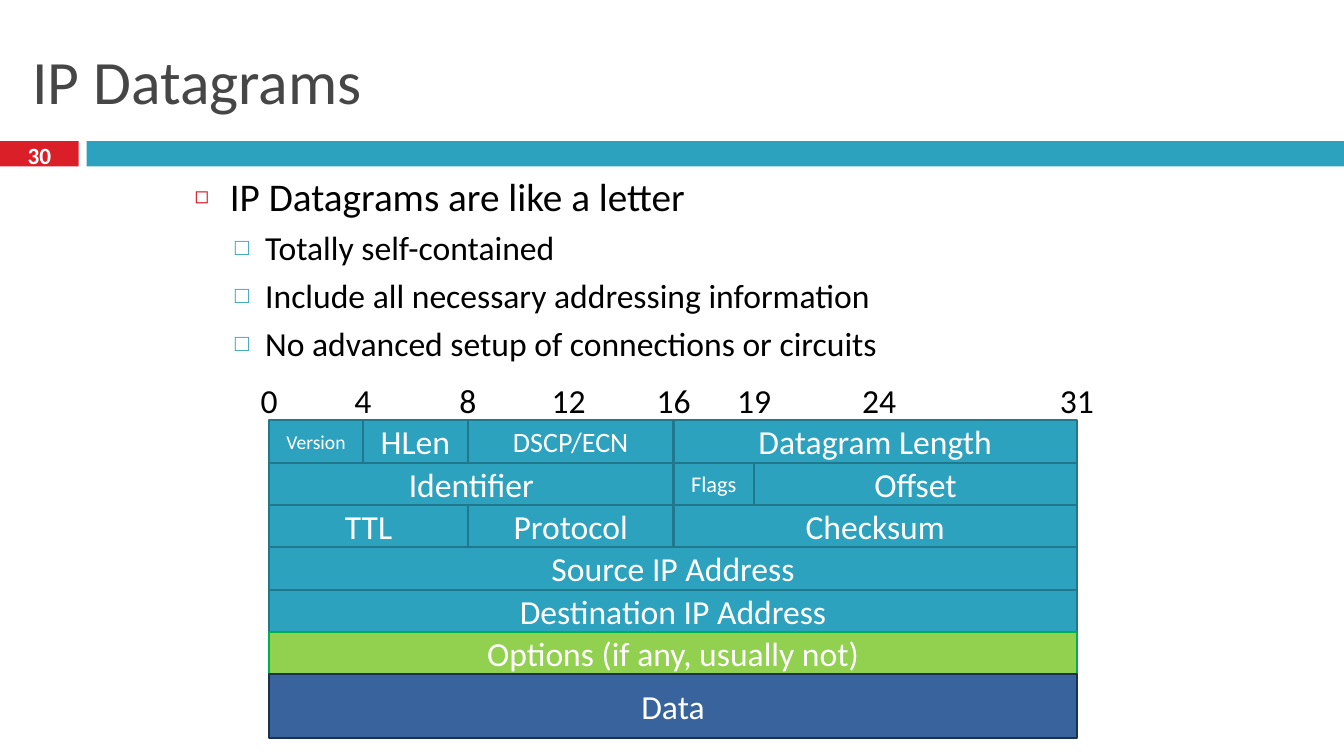
from lxml.etree import SubElement
from pptx import Presentation
from pptx.dml.color import RGBColor
from pptx.enum.shapes import MSO_SHAPE
from pptx.enum.text import MSO_ANCHOR, PP_ALIGN
from pptx.oxml.ns import qn
from pptx.util import Inches, Pt

COLORS = {
    "white": "FFFFFF", "black": "000000", "heading": "464646",
    "red": "DA1F28", "teal": "2DA2BF", "teal_edge": "21788D",
    "green": "92D050", "green_edge": "00B050",
    "navy": "39639D", "navy_edge": "1C314E",
}

# Horizontal place of each bit boundary; the row ends after bit 31.
BIT_X = {0: 2.67, 4: 3.6, 8: 4.64, 12: 5.64, 16: 6.68, 19: 7.48, 24: 8.72, 31: 10.68}

# Each row: fields of (label, first bit, last boundary, font size).
HEADER_ROWS = [
    [("Version", 0, 4, 14), ("HLen", 4, 8, 24),
     ("DSCP/ECN", 8, 16, 20), ("Datagram Length", 16, 31, 24)],
    [("Identifier", 0, 16, 24), ("Flags", 16, 19, 16), ("Offset", 19, 31, 24)],
    [("TTL", 0, 8, 24), ("Protocol", 8, 16, 24), ("Checksum", 16, 31, 24)],
    [("Source IP Address", 0, 31, 24)],
    [("Destination IP Address", 0, 31, 24)],
    [("Options (if any, usually not)", 0, 31, 24)],
    [("Data", 0, 31, 24)],
]
ROW_COLORS = ["teal"] * 5 + ["green", "navy"]
ROW_HEIGHTS = [0.42] * 6 + [0.63]
HEADER_TOP = 4.17

BULLETS = [
    ("IP Datagrams are like a letter", 0),
    ("Totally self-contained", 1),
    ("Include all necessary addressing information", 1),
    ("No advanced setup of connections or circuits", 1),
]
BULLET_LEVELS = [
    {"size": 28, "before": 7, "margin": 0.35, "indent": -0.35,
     "char": "◻", "color": "red", "percent": 60},
    {"size": 24, "before": 5.5, "margin": 0.7, "indent": -0.3,
     "char": "□", "color": "teal", "percent": 70},
]


def rgb(name):
    return RGBColor.from_string(COLORS[name])


class DatagramSlide:
    font_name = "Calibri"

    def __init__(self, deck):
        self.slide = deck.slides.add_slide(deck.slide_layouts[1])
        self.shapes = self.slide.shapes

    def place(self, shape, *box):
        for side, length in zip(("left", "top", "width", "height"), box):
            setattr(shape, side, Inches(length))

    def add_words(self, paragraph, text, size, color, align=PP_ALIGN.CENTER, bold=False):
        paragraph.alignment = align
        run = paragraph.add_run()
        run.text = text
        style = {"name": self.font_name, "size": Pt(size), "bold": bold}
        for key, value in style.items():
            setattr(run.font, key, value)
        run.font.color.rgb = rgb(color)

    def title(self, text, box):
        heading = self.shapes.title
        self.place(heading, *box)
        heading.text_frame.vertical_anchor = MSO_ANCHOR.MIDDLE
        self.add_words(heading.text_frame.paragraphs[0], text, 44, "heading", PP_ALIGN.LEFT)

    def bullets(self, items, box):
        body = self.slide.placeholders[1]
        self.place(body, *box)
        frame = body.text_frame
        frame.vertical_anchor = MSO_ANCHOR.TOP
        for index, (text, level) in enumerate(items):
            paragraph = frame.add_paragraph() if index else frame.paragraphs[0]
            look = BULLET_LEVELS[level]
            paragraph.level = level
            paragraph.space_before = Pt(look["before"])
            self.add_words(paragraph, text, look["size"], "black", PP_ALIGN.LEFT)
            self.mark(paragraph, look)

    def mark(self, paragraph, look):
        """Give a paragraph its hanging indent and coloured bullet."""
        properties = paragraph._p.get_or_add_pPr()
        properties.set("marL", str(Inches(look["margin"])))
        properties.set("indent", str(Inches(look["indent"])))
        color = SubElement(properties, qn("a:buClr"))
        SubElement(color, qn("a:srgbClr"), val=COLORS[look["color"]])
        SubElement(properties, qn("a:buSzPct"), val=str(look["percent"] * 1000))
        SubElement(properties, qn("a:buChar"), char=look["char"])

    def rectangle(self, box, fill, edge=None):
        shape = self.shapes.add_shape(MSO_SHAPE.RECTANGLE, *map(Inches, box))
        shape.shadow.inherit = False
        shape.fill.solid()
        shape.fill.fore_color.rgb = rgb(fill)
        if edge:
            shape.line.color.rgb = rgb(edge)
            shape.line.width = Pt(1.5)
        else:
            shape.line.fill.background()
        return shape

    def field(self, text, box, size, fill):
        cell = self.rectangle(box, fill, fill + "_edge")
        cell.text_frame.word_wrap = True
        cell.text_frame.vertical_anchor = MSO_ANCHOR.MIDDLE
        self.add_words(cell.text_frame.paragraphs[0], text, size, "white")

    def label(self, text, box, size, color, bold=False):
        frame = self.shapes.add_textbox(*map(Inches, box)).text_frame
        frame.word_wrap = True
        frame.vertical_anchor = MSO_ANCHOR.MIDDLE
        self.add_words(frame.paragraphs[0], text, size, color, bold=bold)


def main():
    deck = Presentation()
    deck.slide_width, deck.slide_height = Inches(13.33), Inches(7.5)
    page = DatagramSlide(deck)

    page.rectangle((0, 1.4, 0.78, 0.25), "red")
    page.rectangle((0.86, 1.4, 12.47, 0.25), "teal")
    page.title("IP Datagrams", (0.22, 0.25, 12.89, 1.08))
    page.label("30", (0, 1.37, 0.78, 0.33), 16.6, "white", bold=True)
    page.bullets(BULLETS, (1.83, 1.66, 9.67, 2.25))

    label_width = 0.65
    for bit, x in BIT_X.items():
        page.label(str(bit), (x - label_width / 2, 3.64, label_width, 0.66), 24, "black")

    top = HEADER_TOP
    for fields, fill, height in zip(HEADER_ROWS, ROW_COLORS, ROW_HEIGHTS):
        for text, first, last, size in fields:
            left = BIT_X[first]
            page.field(text, (left, top, BIT_X[last] - left, height), size, fill)
        top += height

    deck.save("out.pptx")


if __name__ == "__main__":
    main()
